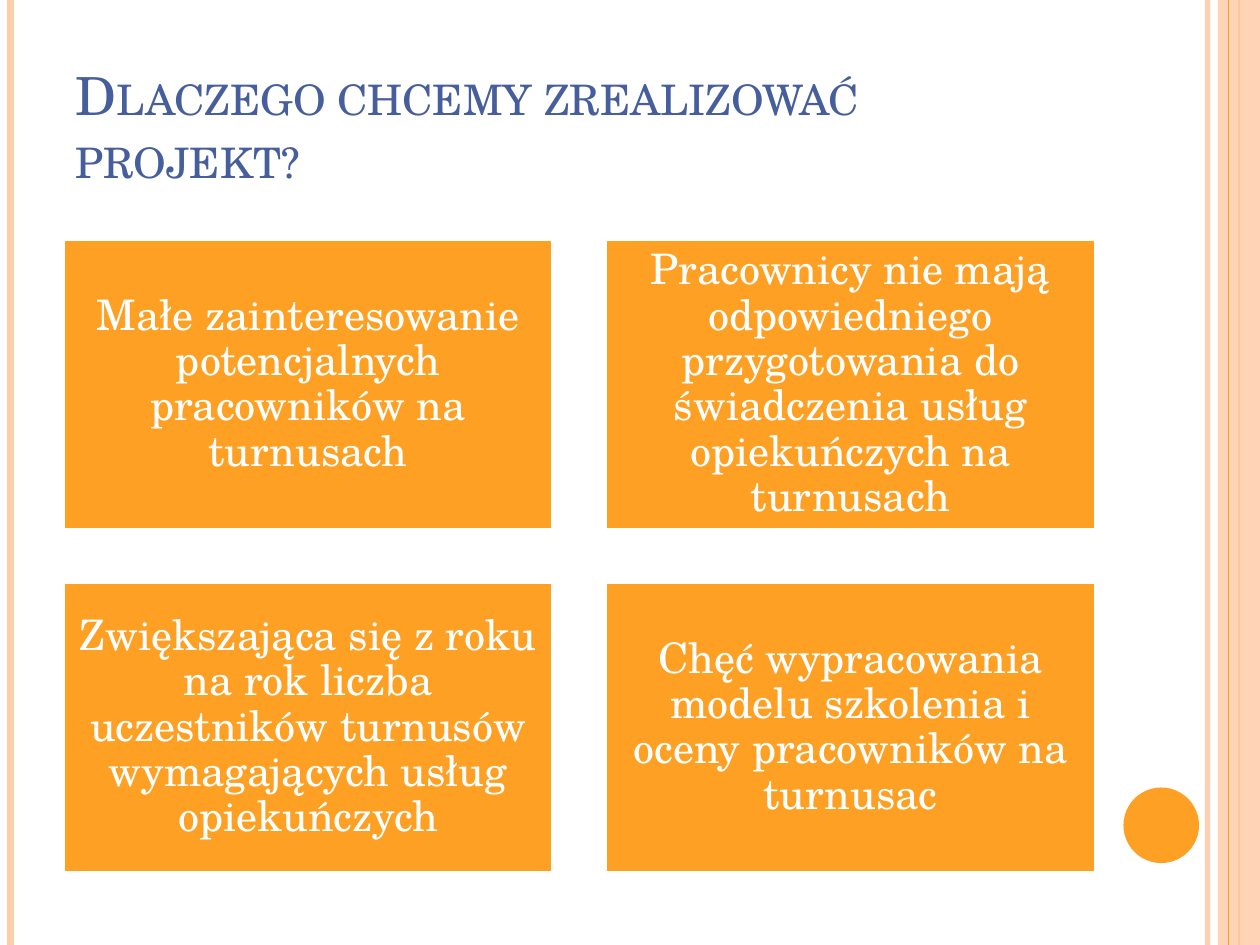
"""Build the slide giving four reasons for carrying out the project."""
import lxml.etree
import pptx
import pptx.dml.color
import pptx.enum.shapes
import pptx.enum.text
import pptx.oxml.ns
import pptx.util
from dataclasses import dataclass

Pt = pptx.util.Pt
qn = pptx.oxml.ns.qn

HEADING = "Dlaczego chcemy zrealizować projekt?"
REASONS = [
    "Małe zainteresowanie potencjalnych pracowników na turnusach",
    "Pracownicy nie mają odpowiedniego przygotowania do świadczenia usług opiekuńczych na turnusach",
    "Zwiększająca się z roku na rok liczba uczestników turnusów wymagających usług opiekuńczych",
    "Chęć wypracowania modelu szkolenia i oceny pracowników na turnusac",
]


@dataclass(frozen=True)
class Theme:
    """Colours, font and type sizes of the slide."""
    font: str = "TeX Gyre Schola"
    heading_size: int = 30
    reason_size: int = 24
    heading: str = "465E9C"
    accent: str = "FDA023"
    pale: str = "FECDAC"
    white: str = "FFFFFF"


THEME = Theme()
WIDTH, HEIGHT = 720, 540
STRIPES = [
    (690, THEME.pale, 3, 93),
    (6, THEME.pale, 4.5, 100),
    (708, THEME.accent, 1.5, 100),
]
BAND_LEFT, BAND_OPACITY = 696, 87
EDGE_STRIPE = (702, THEME.accent, 0.75, 100)
DOT = (642, 450, 43.2, 43.2)
HEADING_BOX = (36, 21.6, 588, 90)
GRID_LEFT, GRID_TOP, COLUMNS = 36, 136.8, 2
CARD_WIDTH, CARD_HEIGHT, GAP = 280, 166, 30


def rgb(colour):
    """Return the colour object for a hex string."""
    return pptx.dml.color.RGBColor.from_string(colour)


def set_opacity(properties, percent):
    """Make the solid colour inside the given properties translucent."""
    colour = next(properties.iter(qn("a:srgbClr")))
    lxml.etree.SubElement(colour, qn("a:alpha")).set("val", str(percent * 1000))


def add_stripe(slide, x, colour, weight, opacity):
    """Add a vertical line over the full slide height."""
    stripe = slide.shapes.add_connector(
        pptx.enum.shapes.MSO_CONNECTOR.STRAIGHT, Pt(x), Pt(0), Pt(x), Pt(HEIGHT))
    stripe.line.color.rgb = rgb(colour)
    stripe.line.width = Pt(weight)
    properties = stripe._element.spPr
    if opacity < 100:
        set_opacity(properties, opacity)
    lxml.etree.SubElement(properties, qn("a:effectLst"))


def add_block(slide, kind, box, colour):
    """Add a flat filled shape without outline."""
    block = slide.shapes.add_shape(kind, *map(Pt, box))
    block.shadow.inherit = False
    block.fill.solid()
    block.fill.fore_color.rgb = rgb(colour)
    block.line.fill.background()
    return block


def write(frame, text, size, colour, align, anchor):
    """Fill a text frame with one formatted paragraph."""
    frame.text = text
    frame.word_wrap = True
    frame.auto_size = pptx.enum.text.MSO_AUTO_SIZE.NONE
    frame.vertical_anchor = anchor
    paragraph = frame.paragraphs[0]
    paragraph.alignment = align
    font = paragraph.runs[0].font
    font.name = THEME.font
    font.size = Pt(size)
    font.color.rgb = rgb(colour)
    return paragraph


def add_heading(slide):
    """Place the title in small capitals."""
    title = slide.shapes.title
    title.left, title.top, title.width, title.height = map(Pt, HEADING_BOX)
    paragraph = write(title.text_frame, HEADING, THEME.heading_size, THEME.heading,
                      pptx.enum.text.PP_ALIGN.LEFT, pptx.enum.text.MSO_ANCHOR.BOTTOM)
    paragraph.runs[0].font._element.set("cap", "small")


def add_reason(slide, index, reason):
    """Add one card at its place in the grid."""
    row, column = divmod(index, COLUMNS)
    box = (GRID_LEFT + column * (CARD_WIDTH + GAP),
           GRID_TOP + row * (CARD_HEIGHT + GAP), CARD_WIDTH, CARD_HEIGHT)
    card = add_block(slide, pptx.enum.shapes.MSO_SHAPE.RECTANGLE, box, THEME.accent)
    card.line.color.rgb = rgb(THEME.white)
    card.line.width = Pt(2)
    frame = card.text_frame
    frame.margin_left = frame.margin_right = Pt(7.2)
    frame.margin_top = frame.margin_bottom = Pt(7.2)
    paragraph = write(frame, reason, THEME.reason_size, THEME.white,
                      pptx.enum.text.PP_ALIGN.CENTER, pptx.enum.text.MSO_ANCHOR.MIDDLE)
    paragraph.line_spacing = 0.9


def main():
    """Assemble and save the slide."""
    deck = pptx.Presentation()
    deck.slide_width, deck.slide_height = Pt(WIDTH), Pt(HEIGHT)
    slide = deck.slides.add_slide(deck.slide_layouts.get_by_name("Title Only"))
    for stripe in STRIPES:
        add_stripe(slide, *stripe)
    band = add_block(slide, pptx.enum.shapes.MSO_SHAPE.RECTANGLE,
                     (BAND_LEFT, 0, WIDTH - BAND_LEFT, HEIGHT), THEME.pale)
    set_opacity(band._element.spPr, BAND_OPACITY)
    add_stripe(slide, *EDGE_STRIPE)
    add_block(slide, pptx.enum.shapes.MSO_SHAPE.OVAL, DOT, THEME.accent)
    add_heading(slide)
    for index, reason in enumerate(REASONS):
        add_reason(slide, index, reason)
    deck.save("out.pptx")


if __name__ == "__main__":
    main()
